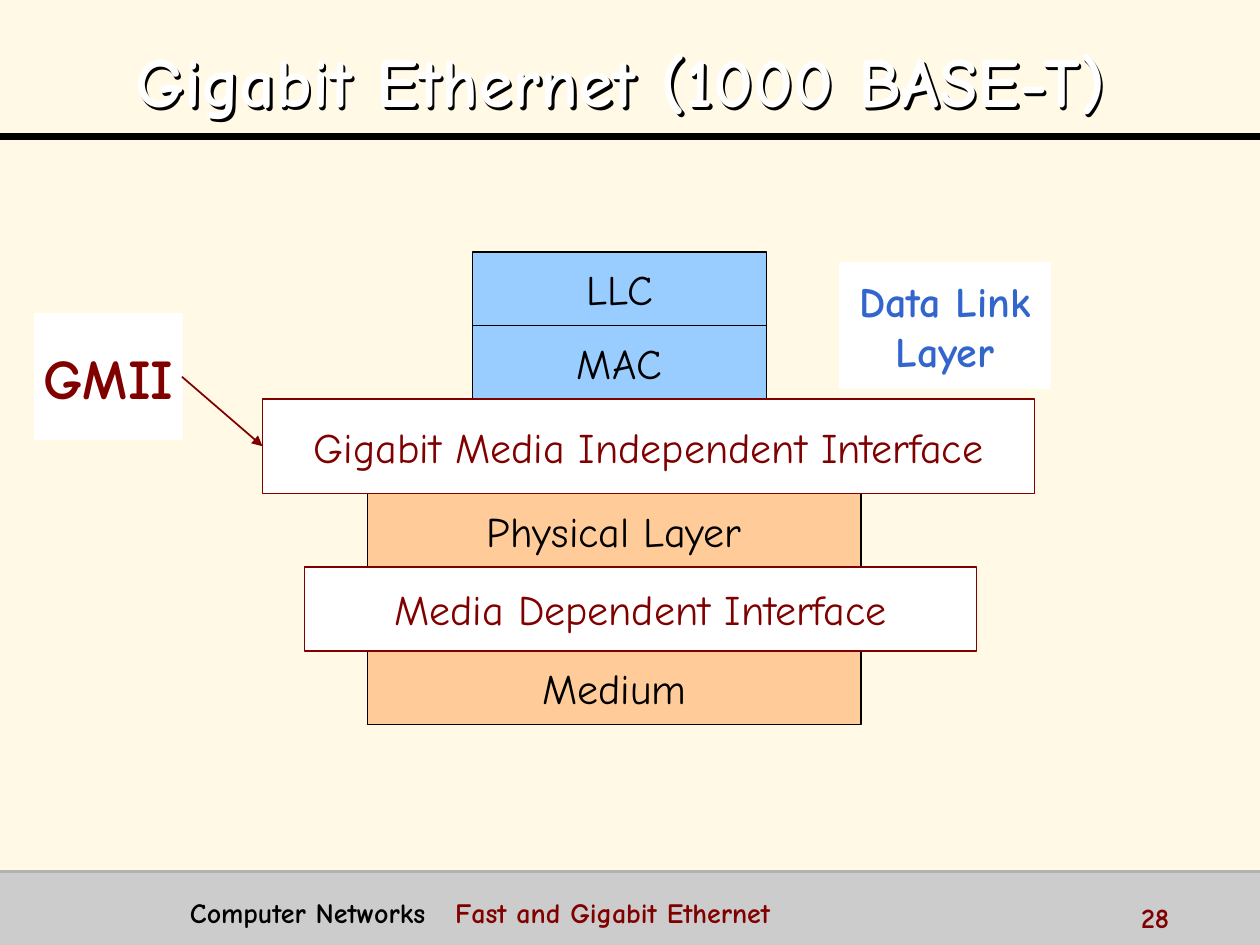
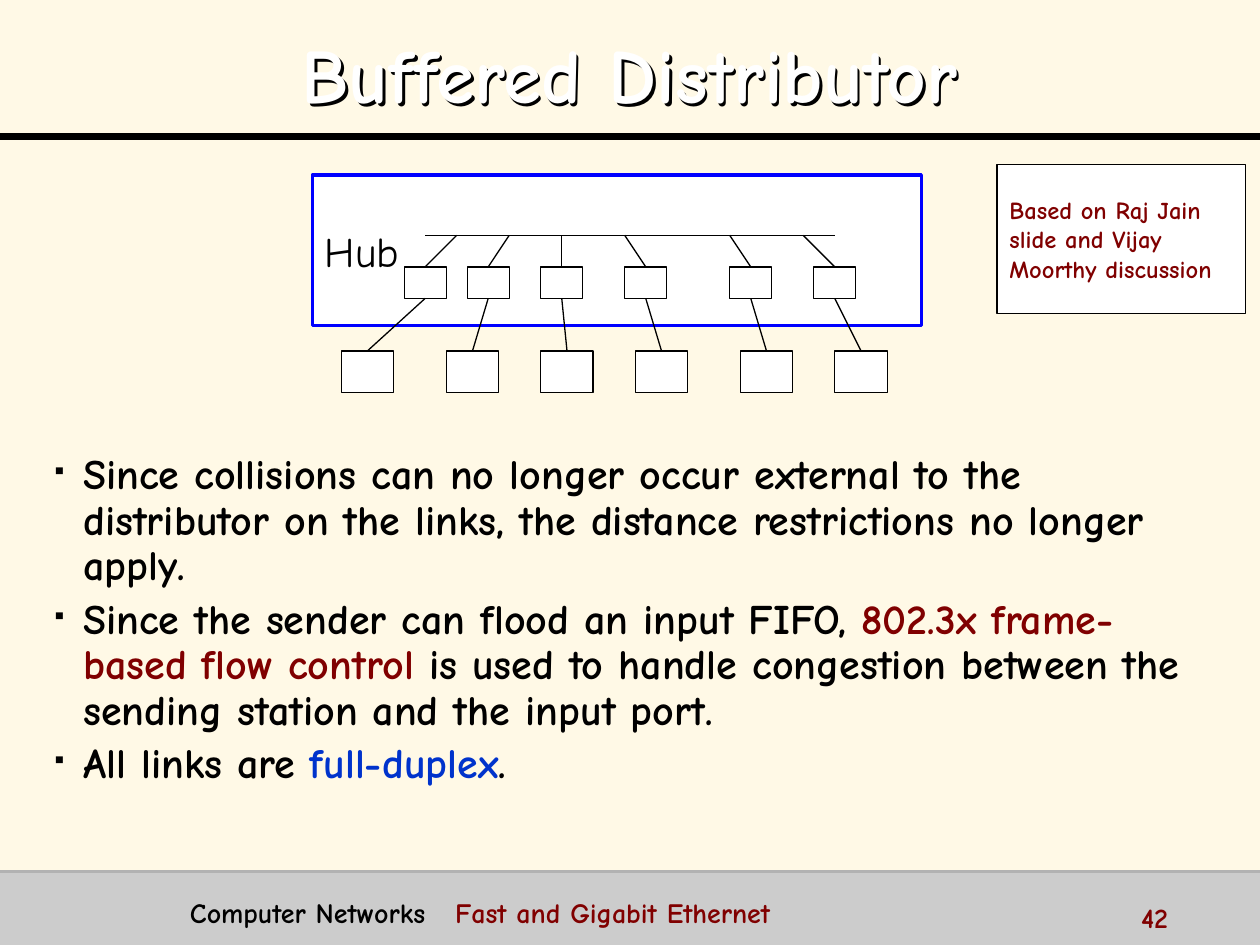
from itertools import accumulate

from lxml.etree import SubElement
from pptx import Presentation
from pptx.dml.color import RGBColor
from pptx.enum.shapes import MSO_CONNECTOR, MSO_SHAPE
from pptx.enum.text import MSO_ANCHOR, PP_ALIGN
from pptx.oxml.ns import qn
from pptx.util import Pt

FONT = "Comic Neue"
WIDTH, HEIGHT = 720, 540
TITLE_RULE, FOOTER_TOP = 78, 498
COLORS = {
    "cream": "FFF9E6", "footer": "CCCCCC", "footer_rule": "B2B2B2",
    "black": "000000", "white": "FFFFFF", "maroon": "800000",
    "link_layer": "99CCFF", "physical": "FFCC99", "label_blue": "3366CC",
    "hub_blue": "0000FF", "accent_blue": "0033CC",
}


def rgb(name):
    return RGBColor.from_string(COLORS[name])


def points(*lengths):
    return [Pt(length) for length in lengths]


def add_run(paragraph, text, size, color, bold=False):
    run = paragraph.add_run()
    run.text = text
    run.font.name = FONT
    run.font.size = Pt(size)
    run.font.bold = bold
    run.font.color.rgb = rgb(color)


def add_paragraph(frame, index):
    return frame.add_paragraph() if index else frame.paragraphs[0]


def add_text_area(slide, box):
    area = slide.shapes.add_textbox(*points(*box))
    area.text_frame.word_wrap = True
    return area


def add_line(slide, start, end, color="black", weight=0.75, arrow=False):
    line = slide.shapes.add_connector(MSO_CONNECTOR.STRAIGHT, *points(*start, *end))
    line.line.color.rgb = rgb(color)
    line.line.width = Pt(weight)
    if arrow:
        SubElement(line.line._get_or_add_ln(), qn("a:tailEnd"), type="triangle")
    SubElement(line._element.spPr, qn("a:effectLst"))


def add_box(slide, box, fill="white", border="black", weight=0.75, lines=(),
            size=24, color="black", bold=False, align=PP_ALIGN.CENTER):
    rectangle = slide.shapes.add_shape(MSO_SHAPE.RECTANGLE, *points(*box))
    rectangle.shadow.inherit = False
    rectangle.fill.solid()
    rectangle.fill.fore_color.rgb = rgb(fill)
    if border:
        rectangle.line.color.rgb = rgb(border)
        rectangle.line.width = Pt(weight)
    else:
        rectangle.line.fill.background()
    frame = rectangle.text_frame
    frame.word_wrap = False
    frame.vertical_anchor = MSO_ANCHOR.MIDDLE
    for index, text in enumerate(lines):
        paragraph = add_paragraph(frame, index)
        paragraph.alignment = align
        add_run(paragraph, text, size, color, bold)


def add_title(slide, box, text, size):
    """Add the white heading; the unfilled area casts its shadow from the text."""
    heading = add_text_area(slide, box)
    effects = SubElement(heading._element.spPr, qn("a:effectLst"))
    shadow = SubElement(effects, qn("a:outerShdw"), dist=str(Pt(2)), dir="2700000",
                        algn="ctr", rotWithShape="0")
    SubElement(shadow, qn("a:srgbClr"), val=COLORS["black"])
    heading.text_frame.vertical_anchor = MSO_ANCHOR.MIDDLE
    paragraph = heading.text_frame.paragraphs[0]
    paragraph.alignment = PP_ALIGN.CENTER
    paragraph.line_spacing = 1.1
    add_run(paragraph, text, size, "white", True)


def add_footer(slide, box, number):
    left, top, width, height = box
    add_box(slide, box, "footer", None)
    add_line(slide, (left, top), (left + width, top), "footer_rule", 2)
    course_area = add_text_area(slide, (left + 101.5, top + 10, 524, 22))
    course = course_area.text_frame.paragraphs[0]
    tabs = SubElement(course._p.get_or_add_pPr(), qn("a:tabLst"))
    SubElement(tabs, qn("a:tab"), pos=str(Pt(151.5)), algn="l")
    add_run(course, "Computer Networks\t", 16, "black", True)
    add_run(course, "Fast and Gigabit Ethernet", 16, "maroon", True)
    page_area = add_text_area(slide, (left + 645, top + 13, 72, 18))
    add_run(page_area.text_frame.paragraphs[0], str(number), 16, "maroon", True)


def add_base_slide(deck, title, title_box, title_size, number):
    slide = deck.slides.add_slide(deck.slide_layouts[6])
    slide.background.fill.solid()
    slide.background.fill.fore_color.rgb = rgb("cream")
    add_footer(slide, (0, FOOTER_TOP, WIDTH, HEIGHT - FOOTER_TOP), number)
    add_line(slide, (0, TITLE_RULE), (WIDTH, TITLE_RULE), weight=4)
    add_title(slide, title_box, title, title_size)
    return slide


def add_protocol_stack(slide, left, top):
    # name, indent, width, height, fill, ink
    layers = [
        ("LLC", 120, 168, 42, "link_layer", "black"),
        ("MAC", 120, 168, 42, "link_layer", "black"),
        ("Gigabit Media Independent Interface", 0, 441, 54, "white", "maroon"),
        ("Physical Layer", 60, 282, 42, "physical", "black"),
        ("Media Dependent Interface", 24, 384, 48, "white", "maroon"),
        ("Medium", 60, 282, 42, "physical", "black"),
    ]
    tops = accumulate((layer[3] for layer in layers), initial=top)
    # Interfaces go last, so that their borders lie over the layers they join.
    for (name, indent, width, height, fill, ink), layer_top in sorted(
            zip(layers, tops), key=lambda placed: placed[0][5] == "maroon"):
        add_box(slide, (left + indent, layer_top, width, height),
                fill, ink, lines=[name], color=ink)
    add_box(slide, (left + 330, top + 6, 120, 72), border="white",
            lines=["Data Link", "Layer"], color="label_blue", bold=True)
    add_box(slide, (left - 130, top + 35.3, 84, 72), border="white",
            lines=["GMII"], size=32, color="maroon", bold=True)
    add_line(slide, (left - 46, top + 71.3), (left, top + 111), "maroon", 1, True)


def add_hub_diagram(slide, box):
    left, top, width, height = box
    tap_centers = [82.5, 112.5, 142.5, 178.5, 238.5, 280.5]
    port_centers = [64.5, 100.5, 142.5, 190.5, 250.5, 298.5]
    station_centers = [31.5, 91.5, 145.5, 199.5, 259.5, 313.5]
    bus_top, port_top, station_top = top + 34.5, top + 52.5, top + 100.5
    port_width, port_height = 24, 18
    station_width, station_height = 30, 24

    add_box(slide, box, border="hub_blue", weight=2, lines=["Hub"],
            align=PP_ALIGN.LEFT)
    add_line(slide, (left + port_centers[0], bus_top),
             (left + port_centers[-1], bus_top))
    for offsets in zip(tap_centers, port_centers, station_centers):
        tap, port, station = (left + offset for offset in offsets)
        add_box(slide, (port - port_width / 2, port_top, port_width, port_height))
        add_box(slide, (station - station_width / 2, station_top,
                        station_width, station_height))
        add_line(slide, (tap, bus_top), (port, port_top))
        add_line(slide, (port, port_top + port_height), (station, station_top))


def add_bullets(slide, box, items):
    frame = add_text_area(slide, box).text_frame
    for index, runs in enumerate(items):
        paragraph = add_paragraph(frame, index)
        paragraph.line_spacing = 0.9
        paragraph.space_before = Pt(4.8 if index else 0)
        properties = paragraph._p.get_or_add_pPr()
        properties.set("marL", str(Pt(18)))
        properties.set("indent", str(Pt(-18)))
        bullet_color = SubElement(properties, qn("a:buClr"))
        SubElement(bullet_color, qn("a:srgbClr"), val=COLORS["black"])
        SubElement(properties, qn("a:buSzPct"), val="50000")
        SubElement(properties, qn("a:buChar"), char="▪")
        for text, color in runs:
            add_run(paragraph, text, 24, color, True)


def build_gigabit_slide(deck):
    slide = add_base_slide(deck, "Gigabit Ethernet (1000 BASE-T)",
                           (8.5, -2, 692, 90.5), 40, 28)
    add_protocol_stack(slide, 150, 144)


def build_distributor_slide(deck):
    slide = add_base_slide(deck, "Buffered Distributor", (54, 12, 612, 54), 44, 42)
    add_bullets(slide, (22.5, 255.7, 667.5, 235.5), [
        [("Since collisions can no longer occur external to the distributor on "
          "the links, the distance restrictions no longer apply.", "black")],
        [("Since the sender can flood an input FIFO, ", "black"),
         ("802.3x frame-based flow control", "maroon"),
         (" is used to handle congestion between the sending station and the "
          "input port.", "black")],
        [("All links are ", "black"), ("full-duplex", "accent_blue"), (".", "black")],
    ])
    add_hub_diagram(slide, (178.5, 100, 348, 86))
    add_box(slide, (569.7, 94, 142, 85),
            lines=["Based on Raj Jain", "slide and Vijay", "Moorthy discussion"],
            size=14, color="maroon", bold=True, align=PP_ALIGN.LEFT)


def main():
    deck = Presentation()
    deck.slide_width, deck.slide_height = points(WIDTH, HEIGHT)
    build_gigabit_slide(deck)
    build_distributor_slide(deck)
    deck.save("out.pptx")


if __name__ == "__main__":
    main()
